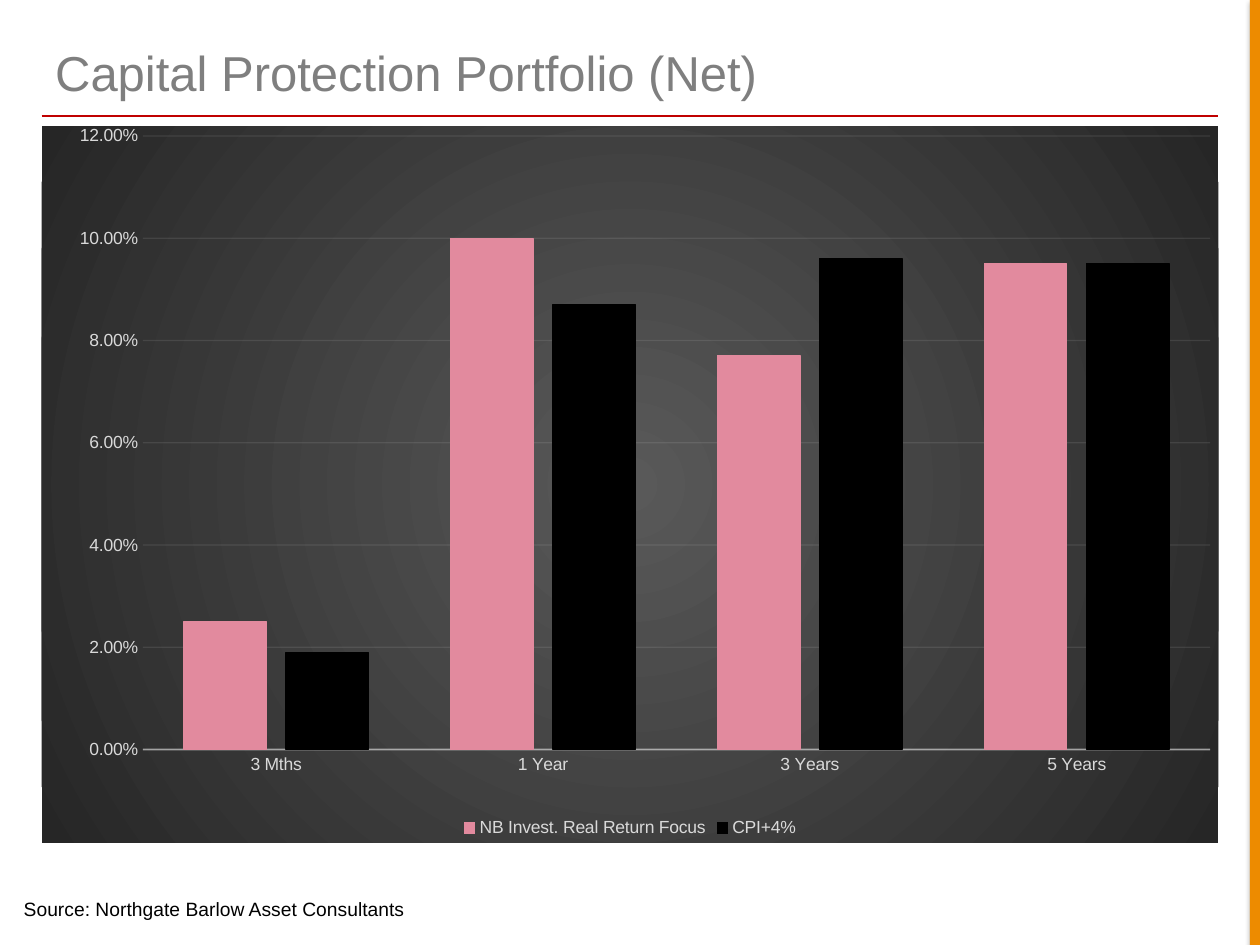
from dataclasses import dataclass

from lxml.etree import SubElement
from pptx import Presentation
from pptx.chart.data import CategoryChartData
from pptx.dml.color import RGBColor
from pptx.enum.chart import XL_CHART_TYPE, XL_LEGEND_POSITION, XL_TICK_MARK
from pptx.enum.shapes import MSO_CONNECTOR, MSO_SHAPE
from pptx.enum.text import MSO_ANCHOR
from pptx.oxml import parse_xml
from pptx.oxml.ns import nsdecls, qn
from pptx.util import Inches, Pt


@dataclass(frozen=True)
class Theme:
    font: str = "Arial"
    title_size: int = 28
    source_size: int = 11
    chart_size: int = 10
    title: str = "7F7F7F"
    text: str = "000000"
    accent: str = "ED8B00"
    rule: str = "C00000"
    chart_text: str = "D9D9D9"
    chart_line: str = "F2F2F2"
    chart_centre: str = "595959"
    chart_edge: str = "262626"
    fund: str = "E28A9E"
    benchmark: str = "000000"


def set_line(line, color, width, opacity=100):
    line.color.rgb = RGBColor.from_string(color)
    line.width = Pt(width)
    if opacity < 100:
        color_element = line.fill._xPr.find(".//" + qn("a:srgbClr"))
        SubElement(color_element, qn("a:alpha"), val=str(opacity * 1000))


class SlideBuilder:
    def __init__(self, slide, theme):
        self.slide = slide
        self.theme = theme

    def style_font(self, font, size, color):
        font.name = self.theme.font
        font.size = Pt(size)
        font.bold = False
        font.color.rgb = RGBColor.from_string(color)

    def text(self, text, box, size, color, anchor=MSO_ANCHOR.TOP):
        shape = self.slide.shapes.add_textbox(*map(Inches, box))
        frame = shape.text_frame
        frame.word_wrap = True
        frame.vertical_anchor = anchor
        run = frame.paragraphs[0].add_run()
        run.text = text
        self.style_font(run.font, size, color)

    def side_bar(self, box):
        shape = self.slide.shapes.add_shape(MSO_SHAPE.RECTANGLE, *map(Inches, box))
        shape.fill.solid()
        shape.fill.fore_color.rgb = RGBColor.from_string(self.theme.accent)
        shape.line.fill.background()
        shape.shadow.inherit = False
        effects = shape._element.spPr.find(qn("a:effectLst"))
        effects.append(parse_xml(
            f'<a:outerShdw {nsdecls("a")} blurRad="{Pt(3.1)}" dist="{Pt(1.8)}" '
            'dir="5400000" rotWithShape="0">'
            '<a:srgbClr val="000000"><a:alpha val="35000"/></a:srgbClr></a:outerShdw>'))

    def rule(self, left, right, top):
        line = self.slide.shapes.add_connector(
            MSO_CONNECTOR.STRAIGHT, Inches(left), Inches(top), Inches(right), Inches(top))
        set_line(line.line, self.theme.rule, 1)
        SubElement(line._element.spPr, qn("a:effectLst"))

    def column_chart(self, box, categories, series, plot):
        """series holds (name, values, color); plot is x, y, w, h as shares of the box."""
        theme = self.theme
        data = CategoryChartData(number_format="0.00%")
        data.categories = categories
        for name, values, _ in series:
            data.add_series(name, values)
        chart = self.slide.shapes.add_chart(
            XL_CHART_TYPE.COLUMN_CLUSTERED, *map(Inches, box), data).chart
        self.style_font(chart.font, theme.chart_size, theme.text)
        chart.has_title = False
        chart.has_legend = True
        chart.legend.position = XL_LEGEND_POSITION.BOTTOM
        chart.legend.include_in_layout = False
        self.style_font(chart.legend.font, theme.chart_size, theme.chart_text)

        for axis in (chart.category_axis, chart.value_axis):
            axis.major_tick_mark = axis.minor_tick_mark = XL_TICK_MARK.NONE
            self.style_font(axis.tick_labels.font, theme.chart_size, theme.chart_text)
        set_line(chart.category_axis.format.line, theme.chart_line, 1, 54)
        value_axis = chart.value_axis
        value_axis.minimum_scale, value_axis.maximum_scale = 0, 0.12
        value_axis.major_unit = 0.02
        value_axis.tick_labels.number_format = "0.00%"
        value_axis.tick_labels.number_format_is_linked = False
        value_axis.format.line.fill.background()
        set_line(value_axis.major_gridlines.format.line, theme.chart_line, 0.75, 10)

        columns = chart.plots[0]
        columns.gap_width, columns.overlap = 100, -24
        columns.vary_by_categories = False
        for column, (_, _, color) in zip(columns.series, series):
            column.format.fill.solid()
            column.format.fill.fore_color.rgb = RGBColor.from_string(color)
            set_line(column.format.line, color, 0.75)
        self.place_plot(chart, plot)
        self.fill_chart(chart)

    def place_plot(self, chart, plot):
        area = chart._chartSpace.chart.plotArea
        for layout in area.findall(qn("c:layout")):
            area.remove(layout)
        sizes = "".join(f'<c:{key} val="{value}"/>' for key, value in zip("xywh", plot))
        area.insert(0, parse_xml(
            f'<c:layout {nsdecls("c")}><c:manualLayout><c:layoutTarget val="inner"/>'
            f'<c:xMode val="edge"/><c:yMode val="edge"/>{sizes}'
            '</c:manualLayout></c:layout>'))

    def fill_chart(self, chart):
        stops = "".join(
            f'<a:gs pos="{position}"><a:srgbClr val="{color}"/></a:gs>'
            for position, color in ((0, self.theme.chart_centre),
                                    (100000, self.theme.chart_edge)))
        chart._chartSpace.chart.addnext(parse_xml(
            f'<c:spPr {nsdecls("c", "a")}><a:gradFill><a:gsLst>{stops}</a:gsLst>'
            '<a:path path="circle"><a:fillToRect l="50000" t="50000" r="50000" b="50000"/>'
            '</a:path></a:gradFill><a:ln><a:noFill/></a:ln></c:spPr>'))


def main():
    presentation = Presentation()
    presentation.slide_width, presentation.slide_height = Inches(10), Inches(7.5)
    slide = presentation.slides.add_slide(presentation.slide_layouts[6])
    theme = Theme()
    builder = SlideBuilder(slide, theme)

    builder.side_bar((9.92, 0, 0.08, 7.5))
    builder.rule(0.33, 9.67, 0.92)
    builder.text("Capital Protection Portfolio (Net)", (0.34, 0.31, 9.33, 0.53),
                 theme.title_size, theme.title, MSO_ANCHOR.MIDDLE)
    builder.text("Source: Northgate Barlow Asset Consultants", (0.09, 7.07, 3.7, 0.28),
                 theme.source_size, theme.text)
    builder.column_chart(
        (0.33, 1, 9.34, 5.69),
        ("3 Mths", "1 Year", "3 Years", "5 Years"),
        (("NB Invest. Real Return Focus", (0.025, 0.1, 0.077, 0.095), theme.fund),
         ("CPI+4%", (0.019, 0.087, 0.096, 0.095), theme.benchmark)),
        plot=(0.086, 0.014, 0.907, 0.856))
    presentation.save("out.pptx")


if __name__ == "__main__":
    main()
